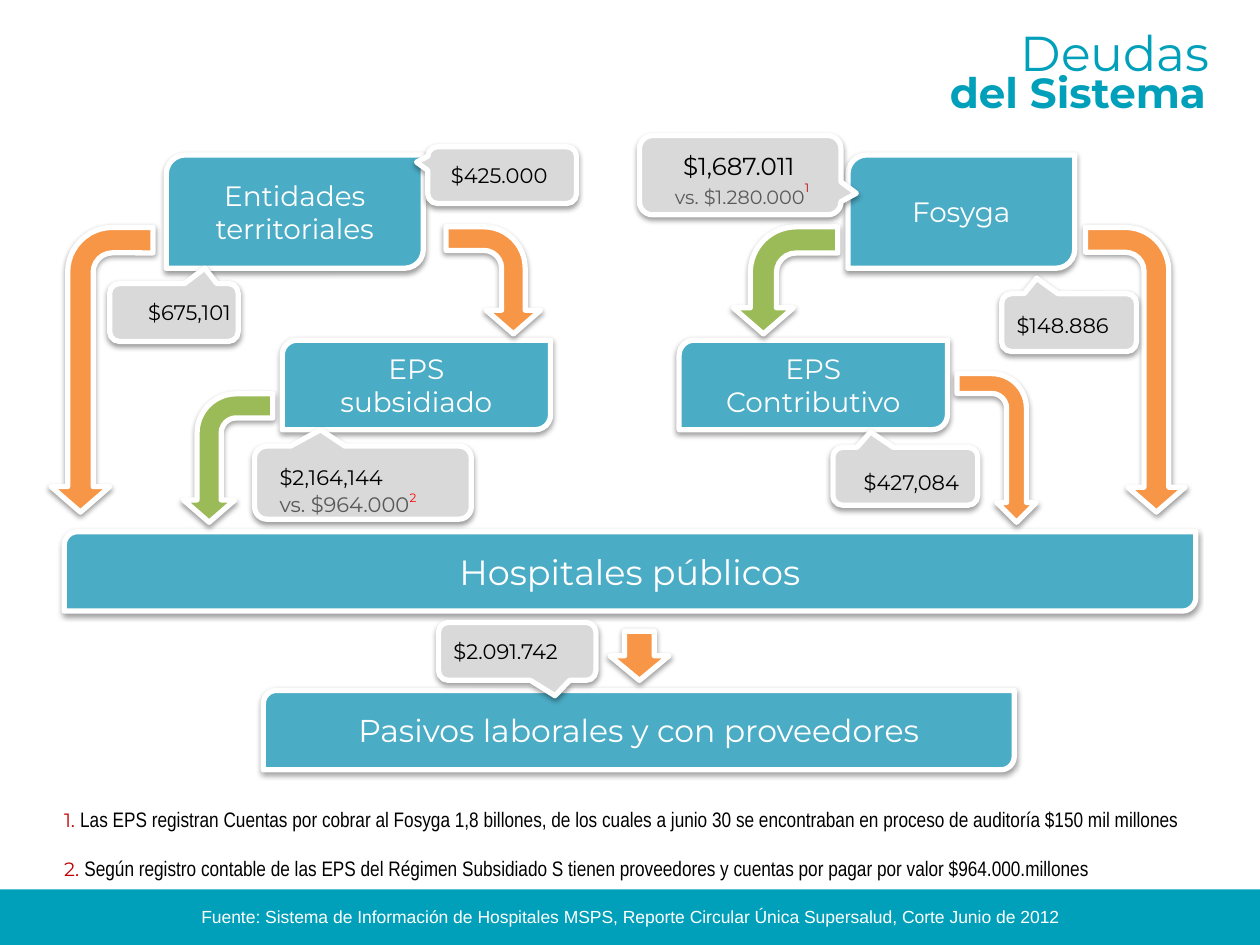
from lxml import etree
from pptx import Presentation
from pptx.dml.color import RGBColor
from pptx.enum.shapes import MSO_SHAPE
from pptx.enum.text import MSO_ANCHOR, PP_ALIGN
from pptx.oxml import parse_xml
from pptx.util import Inches, Pt

NS = "http://schemas.openxmlformats.org/drawingml/2006/main"
SHADOW = (
    f'<a:effectLst xmlns:a="{NS}">'
    '<a:outerShdw blurRad="40000" dist="20000" dir="5400000" rotWithShape="0">'
    '<a:srgbClr val="000000"><a:alpha val="38000"/></a:srgbClr>'
    '</a:outerShdw></a:effectLst>'
)
TEAL, BLUE, ORANGE, GREEN = "00A0BA", "4BACC6", "F79646", "9BBB59"
GREY, DARK, RED, BLACK, WHITE = "D9D9D9", "595959", "C00000", "000000", "FFFFFF"
LEFT, CENTER, RIGHT = PP_ALIGN.LEFT, PP_ALIGN.CENTER, PP_ALIGN.RIGHT

prs = Presentation()
prs.slide_width, prs.slide_height = Inches(10), Inches(7.5)
s = prs.slides.add_slide(prs.slide_layouts[5])


def add_run(p, text, size, color, font="Montserrat", bold=False, base=None):
    r = p.add_run()
    r.text = text
    r.font.size, r.font.name, r.font.bold = Pt(size), font, bold
    r.font.color.rgb = RGBColor.from_string(color)
    if base:
        r.font._element.set("baseline", str(base * 1000))


def add_block(kind, at, fill, rot=0, flip=None, adj=()):
    sp = s.shapes.add_shape(kind, *[Inches(v) for v in at])
    sp.fill.solid()
    sp.fill.fore_color.rgb = RGBColor.from_string(fill)
    sp.line.color.rgb = RGBColor.from_string(WHITE)
    sp.line.width = Pt(3)
    sp.rotation = rot
    if flip:
        sp._element.spPr.xfrm.set(flip, "1")
    for i, value in enumerate(adj):
        sp.adjustments[i] = value
    sp._element.spPr.append(parse_xml(SHADOW))
    return sp


bar = s.shapes.add_shape(MSO_SHAPE.RECTANGLE, 0, Inches(7.06), Inches(10), Inches(0.44))
bar.fill.solid()
bar.fill.fore_color.rgb = RGBColor.from_string(TEAL)
bar.line.fill.background()
bar.shadow.inherit = False

title = s.shapes.title
title.left, title.top, title.width, title.height = [Inches(v) for v in (6.81, 0.41, 2.86, 0.63)]
title.text_frame.vertical_anchor = MSO_ANCHOR.MIDDLE
p = title.text_frame.paragraphs[0]
p.alignment = RIGHT
add_run(p, "del Sistema", 24, TEAL, bold=True)

boxes = [
    ((1.32, 1.23, 2.04, 0.9), ["Entidades", "territoriales"], 16),
    ((6.73, 1.23, 1.8, 0.9), ["Fosyga"], 16),
    ((2.24, 2.7, 2.13, 0.71), ["EPS", "subsidiado"], 16),
    ((5.39, 2.7, 2.13, 0.71), ["EPS", "Contributivo"], 16),
    ((0.51, 4.22, 8.98, 0.63), ["Hospitales públicos"], 20),
    ((2.09, 5.48, 5.96, 0.63), ["Pasivos laborales y con proveedores"], 18),
]
for at, lines, size in boxes:
    sp = add_block(MSO_SHAPE.ROUND_2_DIAG_RECTANGLE, at, BLUE)
    tf = sp.text_frame
    tf.vertical_anchor = MSO_ANCHOR.MIDDLE
    p = tf.paragraphs[0]
    p.alignment = CENTER
    for i, line in enumerate(lines):
        if i:
            p.add_line_break()
        add_run(p, line, size, WHITE)

bend = (0.25, 0.288, 0.25, 0.438)
arrows = [
    ((3.49, 1.85, 0.85, 0.75), ORANGE, 90, None, bend),
    ((-0.32, 2.53, 2.26, 0.81), ORANGE, 90, "flipV", bend),
    ((1.3, 3.28, 1.02, 0.71), GREEN, 270, "flipH", (0.27,) + bend[1:]),
    ((7.32, 3.24, 1.18, 0.63), ORANGE, 90, None, ()),
    ((7.88, 2.54, 2.26, 0.79), ORANGE, 90, None, bend),
    ((5.81, 1.81, 0.85, 0.83), GREEN, 90, "flipV", bend),
]
for at, fill, rot, flip, adj in arrows:
    add_block(MSO_SHAPE.BENT_ARROW, at, fill, rot, flip, adj)
add_block(MSO_SHAPE.DOWN_ARROW, (4.84, 5.01, 0.47, 0.39), ORANGE)

side, tip = (-0.228, 0.576, 0.167), (-0.24, 0.766, 0.167)
callouts = [
    ((5.56, 0.59, 0.63, 1.6), 270, None, side),
    ((3.76, 0.8, 0.45, 1.18), 90, None, side),
    ((7.95, 2.33, 1.07, 0.46), 180, "flipH", tip),
    ((6.61, 3.55, 1.15, 0.46), 180, "flipH", tip),
    ((2.02, 3.54, 1.72, 0.58), 180, "flipH", (-0.196, 0.723, 0.167)),
    ((0.87, 2.25, 1.02, 0.46), 180, None, tip),
    ((3.48, 4.94, 1.25, 0.46), 0, "flipH", tip),
]
for at, rot, flip, adj in callouts:
    add_block(MSO_SHAPE.ROUNDED_RECTANGULAR_CALLOUT, at, GREY, rot, flip, adj)

note1 = ("Las EPS registran Cuentas por cobrar al Fosyga 1,8 billones, de los cuales a junio 30 "
         "se encontraban en proceso de auditoría $150 mil millones")
note2 = ("Según registro contable de las EPS del Régimen Subsidiado S tienen proveedores y cuentas "
         "por pagar por valor $964.000.millones")
source = ("Fuente: Sistema de Información de Hospitales MSPS, Reporte Circular Única Supersalud, "
          "Corte Junio de 2012")
texts = [
    ((7.91, 0.13, 1.79, 0.57), RIGHT, [[("Deudas", 28, TEAL)]]),
    ((5.05, 1.15, 1.68, 0.52), CENTER, [
        [("$1,687.011 ", 14, BLACK)],
        [("vs. $1.280.000", 11, DARK), ("1", 12, RED, "Montserrat", False, 56)]]),
    ((3.48, 1.24, 1.1, 0.3), LEFT, [[("$425.000", 12, BLACK)]]),
    ((7.97, 2.43, 1.18, 0.3), LEFT, [[("$148.886", 12, BLACK)]]),
    ((6.65, 3.68, 1.06, 0.3), RIGHT, [[("$427,084", 12, BLACK)]]),
    ((2.12, 3.64, 2.49, 0.5), LEFT, [
        [("$2,164,144", 12, BLACK)],
        [("vs. $964.000", 12, DARK), ("2", 12, "FF0000", "Montserrat", False, 50)]]),
    ((0.83, 2.33, 1.1, 0.3), RIGHT, [[("$675,101", 12, BLACK)]]),
    ((3.5, 5.02, 1.25, 0.3), LEFT, [[("$2.091.742", 12, BLACK)]]),
    ((0.41, 6.35, 9.29, 0.63), LEFT, [
        [("1. ", 11, RED), (note1, 12, BLACK, "Arial Narrow")],
        [("2. ", 11, RED), (note2, 12, BLACK, "Arial Narrow")]]),
    ((1.2, 7.14, 7.6, 0.4), CENTER, [[(source, 10, WHITE, "Arial")]]),
]
for at, align, paragraphs in texts:
    tf = s.shapes.add_textbox(*[Inches(v) for v in at]).text_frame
    tf.word_wrap = paragraphs[0][0][0] != "Deudas"
    for i, runs in enumerate(paragraphs):
        p = tf.add_paragraph() if i else tf.paragraphs[0]
        p.alignment = align
        if i and runs[0][0] == "2. ":
            p.space_before = Pt(13.5)
        for run in runs:
            add_run(p, *run)

prs.save("out.pptx")
